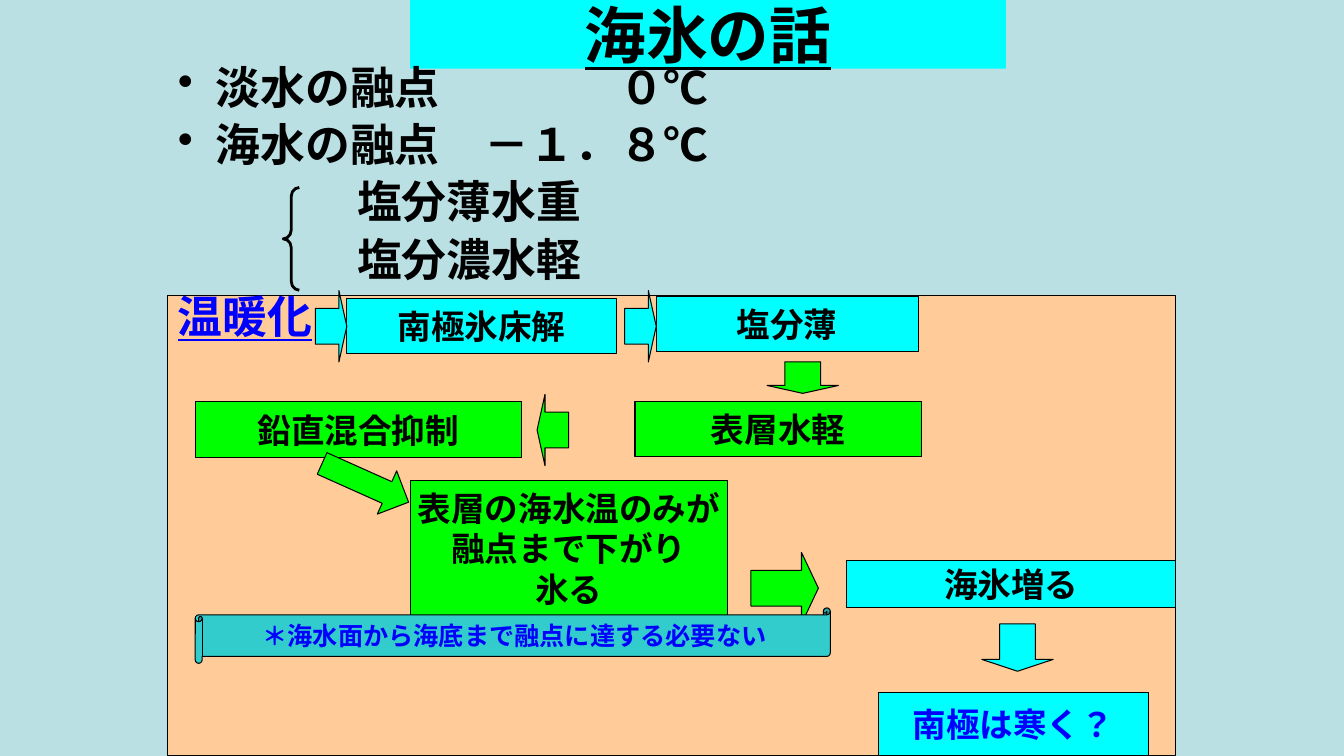
"""Build the sea ice slide: melting points above a flow chart of warming and ice growth."""
import pptx
import pptx.dml.color
import pptx.enum.lang
import pptx.enum.shapes
import pptx.enum.text
import pptx.oxml.xmlchemy
import pptx.util
from lxml import etree

Pt = pptx.util.Pt
RGBColor = pptx.dml.color.RGBColor
SHAPE = pptx.enum.shapes.MSO_SHAPE
ALIGN = pptx.enum.text.PP_ALIGN
ANCHOR = pptx.enum.text.MSO_ANCHOR

BACKGROUND = RGBColor(0xBB, 0xE0, 0xE3)
PEACH = RGBColor(0xFF, 0xCC, 0x99)
CYAN = RGBColor(0x00, 0xFF, 0xFF)
GREEN = RGBColor(0x00, 0xFF, 0x00)
TEAL = RGBColor(0x33, 0xCC, 0xCC)
BLACK = RGBColor(0x00, 0x00, 0x00)
BLUE = RGBColor(0x00, 0x00, 0xFF)
BODY_FORMAT = {"size": 32, "line_spacing": 0.9, "space_before": 6.4}


def write_lines(shape, lines, size=24, color=BLACK, align=ALIGN.CENTER, anchor=ANCHOR.MIDDLE,
                wrap=False, underline=None, line_spacing=None, space_before=0):
    """Fill a shape with one formatted paragraph per line."""
    frame = shape.text_frame
    frame.word_wrap = wrap
    frame.vertical_anchor = anchor
    for index, line in enumerate(lines):
        paragraph = frame.add_paragraph() if index else frame.paragraphs[0]
        paragraph.alignment = align
        paragraph.line_spacing = line_spacing
        if index and space_before:
            paragraph.space_before = Pt(space_before)
        run = paragraph.add_run()
        run.text = line
        run.font.name = "Arial"
        run.font.size = Pt(size)
        run.font.bold = True
        run.font.underline = underline
        run.font.color.rgb = color
        run.font.language_id = pptx.enum.lang.MSO_LANGUAGE_ID.JAPANESE


def add_preset(preset, box, fill=None, line_width=0.75, rotation=0, adjustments=()):
    """Draw a preset shape, outlined in black unless the line width is zero."""
    left, top, width, height = box
    shape = slide.shapes.add_shape(preset, Pt(left), Pt(top), Pt(width), Pt(height))
    shape.shadow.inherit = False
    shape.rotation = rotation
    for index, value in enumerate(adjustments):
        shape.adjustments[index] = value
    if fill is None:
        shape.fill.background()
    else:
        shape.fill.solid()
        shape.fill.fore_color.rgb = fill
    if line_width:
        shape.line.color.rgb = BLACK
        shape.line.width = Pt(line_width)
    else:
        shape.line.fill.background()
    return shape


presentation = pptx.Presentation()
presentation.slide_width = Pt(960)
presentation.slide_height = Pt(540)
slide = presentation.slides.add_slide(presentation.slide_layouts[6])
slide.background.fill.solid()
slide.background.fill.fore_color.rgb = BACKGROUND

add_preset(SHAPE.RECTANGLE, (120, 211, 720, 329), PEACH)
title = add_preset(SHAPE.RECTANGLE, (293, 0, 425.5, 49), CYAN, line_width=0)
write_lines(title, ["海氷の話"], size=44, underline=True, wrap=True)

body = slide.shapes.add_textbox(Pt(120), Pt(43.2), Pt(684), Pt(496.8))
body_lines = ["淡水の融点", "海水の融点", "塩分薄水重", "塩分濃水軽", "温暖化"]
write_lines(body, body_lines, align=ALIGN.LEFT, anchor=ANCHOR.TOP, wrap=True, **BODY_FORMAT)
paragraphs = body.text_frame.paragraphs
for paragraph in paragraphs[:2]:
    properties = paragraph._p.get_or_add_pPr()
    properties.set("marL", str(Pt(27)))
    properties.set("indent", str(-Pt(27)))
    bullet = etree.SubElement(properties, pptx.oxml.ns.qn("a:buChar"))
    bullet.set("char", "•")
for paragraph in paragraphs[2:4]:
    paragraph._p.get_or_add_pPr().set("marL", str(Pt(128)))
warming_font = paragraphs[4].runs[0].font
warming_font.color.rgb = BLUE
warming_font.underline = True

melting_points = slide.shapes.add_textbox(Pt(320), Pt(43.2), Pt(193.4), Pt(90))
write_lines(melting_points, ["０℃", "－１．８℃"], align=ALIGN.RIGHT, anchor=ANCHOR.TOP,
            wrap=True, **BODY_FORMAT)

add_preset(SHAPE.LEFT_BRACE, (202.3, 133.9, 11.5, 73.4), line_width=2, adjustments=(0.55, 0.5))

steps = [
    (["塩分薄"], (468.7, 211.7, 187.2, 39.6), CYAN, BLACK),
    (["海氷増る"], (604.8, 400.3, 235.2, 33.8), CYAN, BLACK),
    (["南極氷床解"], (247.5, 213.1, 193, 39.6), CYAN, BLACK),
    (["表層水軽"], (453.6, 286.8, 204.5, 39.6), GREEN, BLACK),
    (["鉛直混合抑制"], (139.5, 287, 233, 39.6), GREEN, BLACK),
    (["南極は寒く？"], (627.3, 494.6, 193, 45.4), CYAN, BLUE),
    (["表層の海水温のみが", "融点まで下がり", "氷る"], (293, 343.6, 226.8, 96.5), GREEN, BLACK),
]
for lines, box, fill, color in steps:
    write_lines(add_preset(SHAPE.RECTANGLE, box, fill), lines, color=color)

arrows = [
    ((701.3, 445.7, 51, 33.8), 0, CYAN, 0.25),
    ((432, 221.8, 51, 22.5), 270, CYAN, 0.25),
    ((547.9, 258.5, 51, 22.5), 0, GREEN, 0.25),
    ((369.4, 295.9, 51, 22.5), 90, GREEN, 0.25),
    ((244.1, 311, 33.8, 67.7), 294.1, GREEN, 0.5),
    ((535, 396, 51, 48.2), 270, GREEN, 0.25),
    ((211, 221.8, 51, 22.5), 270, CYAN, 0.25),
]
for box, rotation, fill, head in arrows:
    add_preset(SHAPE.DOWN_ARROW, box, fill, rotation=rotation, adjustments=(0.5, head))

scroll = add_preset(SHAPE.HORIZONTAL_SCROLL, (139.5, 434.2, 453.6, 39.6), TEAL, adjustments=(0.125,))
write_lines(scroll, ["＊海水面から海底まで融点に達する必要ない"], size=18, color=BLUE)

presentation.save("out.pptx")
